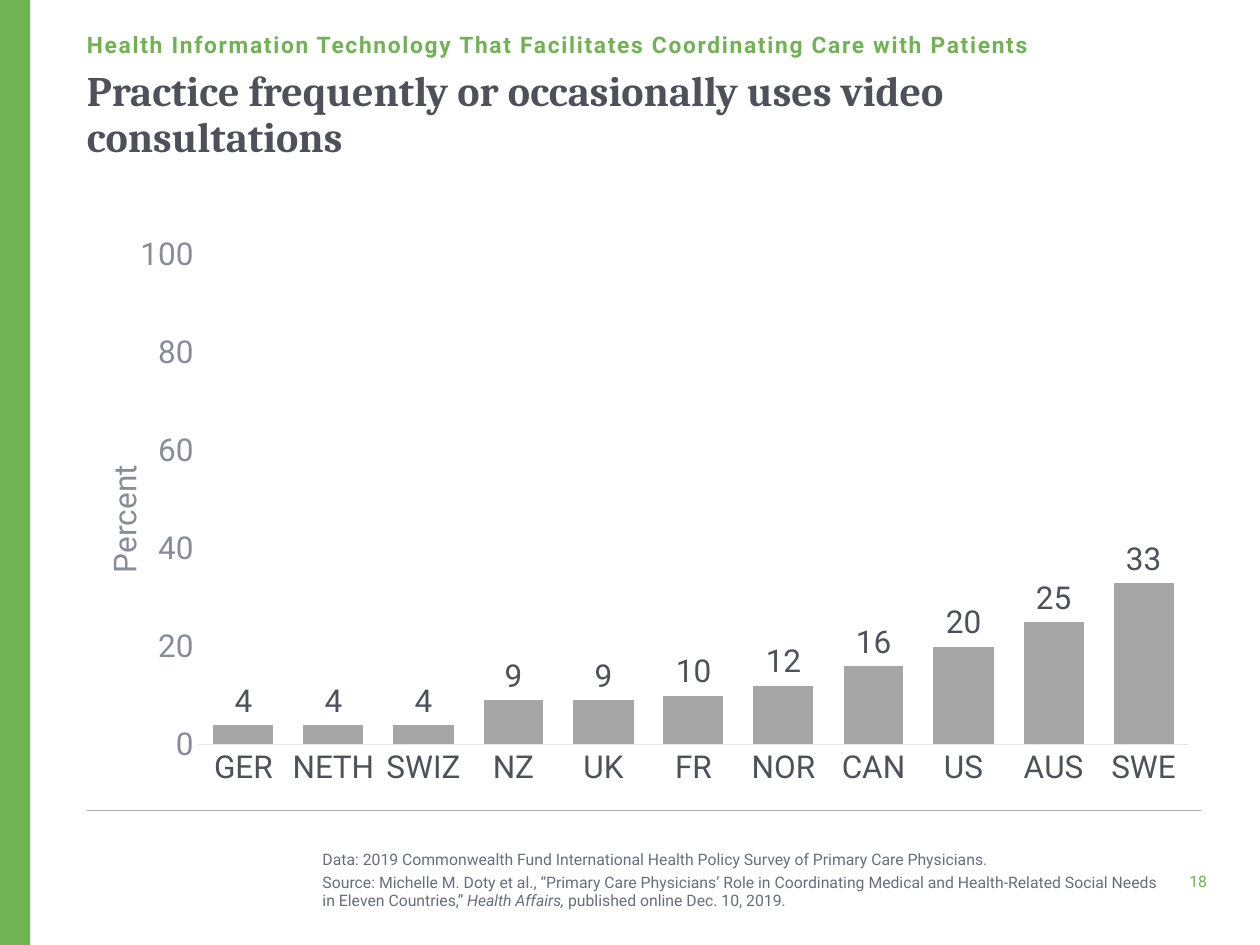
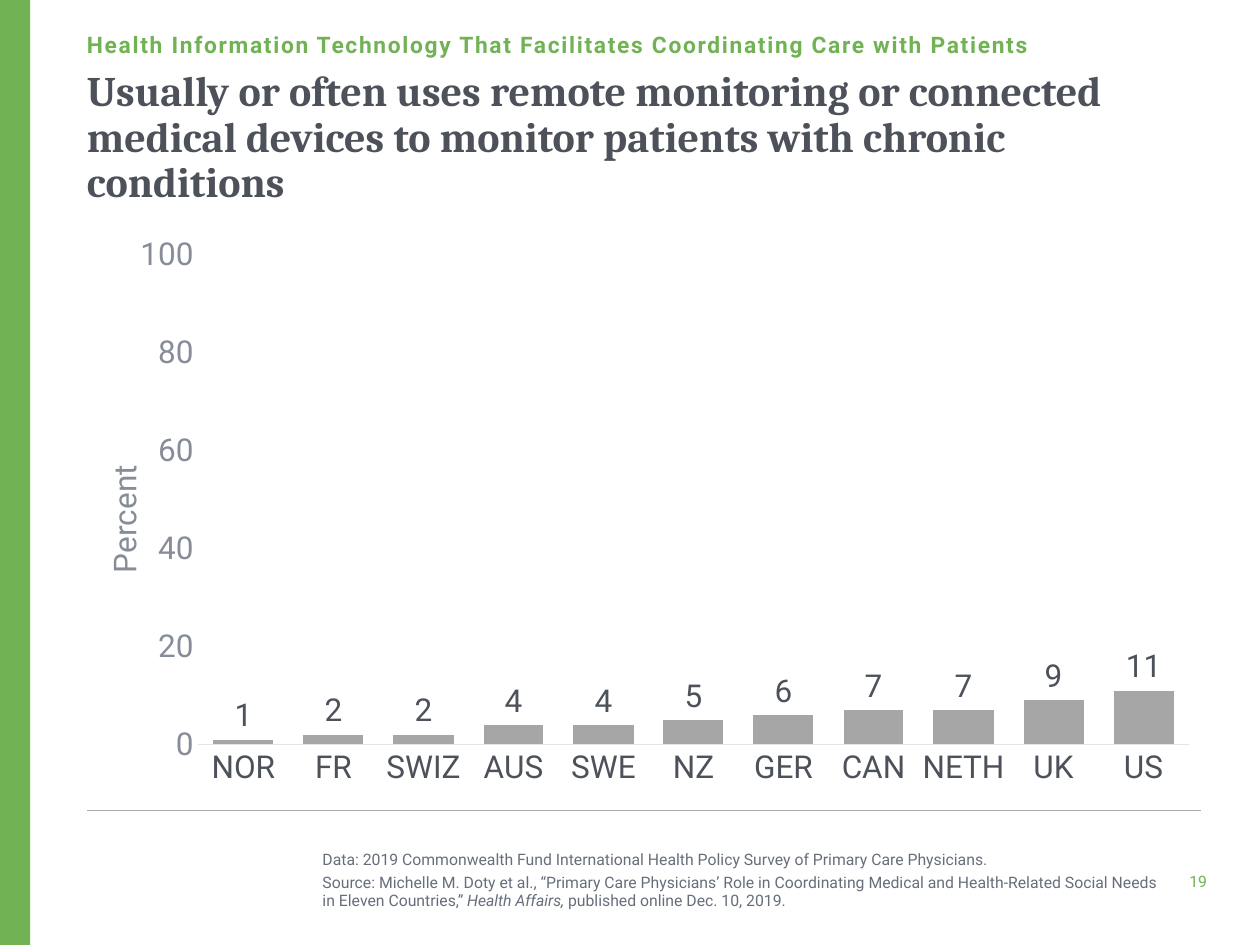
"""Build two chart slides on care coordination technology."""
from dataclasses import dataclass

from lxml import etree
from pptx import Presentation
from pptx.chart.axis import ValueAxis
from pptx.chart.chart import Chart
from pptx.chart.data import CategoryChartData
from pptx.dml.color import RGBColor
from pptx.enum.chart import XL_CHART_TYPE, XL_LABEL_POSITION, XL_TICK_MARK
from pptx.enum.shapes import MSO_CONNECTOR, MSO_SHAPE
from pptx.enum.text import MSO_ANCHOR, PP_ALIGN
from pptx.oxml.ns import qn
from pptx.slide import Slide
from pptx.text.text import Font
from pptx.util import Inches, Pt

COLUMN_CHART = XL_CHART_TYPE.COLUMN_CLUSTERED
LABEL_ABOVE = XL_LABEL_POSITION.OUTSIDE_END
NO_TICK = XL_TICK_MARK.NONE
STRAIGHT = MSO_CONNECTOR.STRAIGHT
RECTANGLE = MSO_SHAPE.RECTANGLE
TOP, MIDDLE, BOTTOM = MSO_ANCHOR.TOP, MSO_ANCHOR.MIDDLE, MSO_ANCHOR.BOTTOM
LEFT, RIGHT = PP_ALIGN.LEFT, PP_ALIGN.RIGHT

WIDTH, HEIGHT = Inches(10), Inches(7.5)
COLUMNS, ROWS = 100, 75

GREEN, DARK, SLATE, MUTED = "71B254", "4C515A", "676E7B", "868D99"
BAR_GREY, RULE_GREY, AXIS_GREY = "A6A6A6", "ABABAB", "E3E5E7"
SANS, SERIF = "Roboto", "Cambria"

SECTION = "Health Information Technology That Facilitates Coordinating Care with Patients"
SOURCES = [
    [("Data: 2019 Commonwealth Fund International Health Policy Survey "
      "of Primary Care Physicians.", False)],
    [("Source: Michelle M. Doty et al., “Primary Care Physicians’ Role in Coordinating "
      "Medical and Health-Related Social Needs in Eleven Countries,” ", False),
     ("Health Affairs,", True),
     (" published online Dec. 10, 2019.", False)],
]


@dataclass(frozen=True)
class Area:
    """A rectangle in grid columns and rows."""
    column: float
    row: float
    columns: float
    rows: float

    def lengths(self) -> tuple[int, int, int, int]:
        """Return left, top, width and height."""
        return (across(self.column), down(self.row),
                across(self.columns), down(self.rows))


@dataclass(frozen=True)
class TextStyle:
    """The look of a block of text."""
    size: float
    color: str
    name: str = SANS
    bold: bool = False
    tracking: int = 0
    anchor: MSO_ANCHOR = TOP
    align: PP_ALIGN = LEFT
    line_spacing: float = 1.0
    gap: float = 0
    wrap: bool = True


@dataclass(frozen=True)
class ChartPage:
    """The content of one slide."""
    number: int
    title: str
    percents: dict[str, int]


BAND = Area(0, 0, 2.4, ROWS)
SECTION_AREA = Area(6.9, 1.9, 88.5, 2.7)
TITLE_AREA = Area(6.9, 5.6, 88.5, 13)
CHART_AREA = Area(6.9, 18.6, 88.5, 44.7)
SOURCE_AREA = Area(25.6, 65.6, 66.3, 8.5)
NUMBER_AREA = Area(92.7, 68.8, 3.1, 2.2)
RULE_START, RULE_END, RULE_ROW = 6.9, 95.3, 64.3

SECTION_STYLE = TextStyle(13, GREEN, bold=True, tracking=100, anchor=BOTTOM)
TITLE_STYLE = TextStyle(24, DARK, SERIF, bold=True, line_spacing=0.9)
SOURCE_STYLE = TextStyle(9, SLATE, anchor=MIDDLE, gap=1.8)
NUMBER_STYLE = TextStyle(9, GREEN, anchor=MIDDLE, align=RIGHT, wrap=False)
LABEL_STYLE = TextStyle(18, DARK)
SCALE_STYLE = TextStyle(18, MUTED)

PAGES = [
    ChartPage(18, "Practice frequently or occasionally uses video consultations",
              {"GER": 4, "NETH": 4, "SWIZ": 4, "NZ": 9, "UK": 9, "FR": 10,
               "NOR": 12, "CAN": 16, "US": 20, "AUS": 25, "SWE": 33}),
    ChartPage(19, "Usually or often uses remote monitoring or connected medical devices "
              "to monitor patients with chronic conditions",
              {"NOR": 1, "FR": 2, "SWIZ": 2, "AUS": 4, "SWE": 4, "NZ": 5,
               "GER": 6, "CAN": 7, "NETH": 7, "UK": 9, "US": 11}),
]


def across(columns: float) -> int:
    """Convert grid columns to a length."""
    return round(WIDTH * columns / COLUMNS)


def down(rows: float) -> int:
    """Convert grid rows to a length."""
    return round(HEIGHT * rows / ROWS)


def rgb(color: str) -> RGBColor:
    """Convert a hex string to a colour."""
    return RGBColor.from_string(color)


def style_font(font: Font, style: TextStyle) -> None:
    """Apply a text style to a font."""
    font.name = style.name
    font.size = Pt(style.size)
    font.bold = style.bold
    font.color.rgb = rgb(style.color)
    if style.tracking:
        font._element.set("spc", str(style.tracking))


def add_text(page: Slide, area: Area, style: TextStyle,
             paragraphs: list[list[tuple[str, bool]]]) -> None:
    """Add a text box of paragraphs made of (text, italic) spans."""
    box = page.shapes.add_textbox(*area.lengths())
    frame = box.text_frame
    frame.word_wrap = style.wrap
    frame.vertical_anchor = style.anchor
    frame.margin_left = frame.margin_right = frame.margin_top = frame.margin_bottom = 0
    for index, spans in enumerate(paragraphs):
        para = frame.add_paragraph() if index else frame.paragraphs[0]
        para.alignment = style.align
        para.line_spacing = style.line_spacing
        if index:
            para.space_before = Pt(style.gap)
        style_font(para.font, style)
        for text, italic in spans:
            span = para.add_run()
            span.text = text
            if italic:
                span.font.italic = True


def add_frame(page: Slide) -> None:
    """Add the side band and the rule above the sources."""
    band = page.shapes.add_shape(RECTANGLE, *BAND.lengths())
    band.shadow.inherit = False
    band.fill.solid()
    band.fill.fore_color.rgb = rgb(GREEN)
    band.line.fill.background()
    rule = page.shapes.add_connector(STRAIGHT, across(RULE_END), down(RULE_ROW),
                                     across(RULE_START), down(RULE_ROW))
    rule.line.color.rgb = rgb(RULE_GREY)
    rule.line.width = Pt(0.75)
    etree.SubElement(rule._element.spPr, qn("a:effectLst"))


def set_layout(parent: etree._Element, **settings: str | float) -> None:
    """Give a chart part a manual layout."""
    layout = parent.find(qn("c:layout"))
    if layout is None:
        layout = etree.Element(qn("c:layout"))
        parent.insert(0, layout)
    manual = etree.SubElement(layout, qn("c:manualLayout"))
    for name, value in settings.items():
        etree.SubElement(manual, qn(f"c:{name}")).set("val", str(value))


def style_scale(axis: ValueAxis) -> None:
    """Set the percent scale and its upright title."""
    axis.minimum_scale, axis.maximum_scale, axis.major_unit = 0, 100, 20
    axis.has_major_gridlines = False
    axis.major_tick_mark = axis.minor_tick_mark = NO_TICK
    axis.format.line.fill.background()
    axis.tick_labels.number_format = "#,##0"
    axis.tick_labels.number_format_is_linked = False
    style_font(axis.tick_labels.font, SCALE_STYLE)
    frame = axis.axis_title.text_frame
    frame.text = "Percent"
    style_font(frame.paragraphs[0].font, SCALE_STYLE)
    frame._txBody.bodyPr.set("rot", "-5400000")
    frame._txBody.bodyPr.set("vert", "horz")
    set_layout(axis.axis_title._element, xMode="edge", yMode="edge", x=0.01, y=0.4)


def style_columns(chart: Chart) -> None:
    """Set the columns, their labels and the country axis."""
    plot = chart.plots[0]
    plot.gap_width, plot.overlap = 50, -27
    plot.vary_by_categories = False
    fill = plot.series[0].format.fill
    fill.solid()
    fill.fore_color.rgb = rgb(BAR_GREY)
    plot.has_data_labels = True
    labels = plot.data_labels
    labels.show_value = True
    labels.position = LABEL_ABOVE
    labels.number_format = "0"
    labels.number_format_is_linked = False
    style_font(labels.font, LABEL_STYLE)
    axis = chart.category_axis
    axis.major_tick_mark = axis.minor_tick_mark = NO_TICK
    axis.format.line.color.rgb = rgb(AXIS_GREY)
    axis.format.line.width = Pt(0.75)
    style_font(axis.tick_labels.font, LABEL_STYLE)


def add_percent_chart(page: Slide, percents: dict[str, int]) -> None:
    """Add the column chart of percents by country."""
    data = CategoryChartData()
    data.categories = list(percents)
    data.add_series("Series 1", list(percents.values()))
    chart = page.shapes.add_chart(COLUMN_CHART, *CHART_AREA.lengths(), data).chart
    chart.has_legend = chart.has_title = False
    style_font(chart.font, LABEL_STYLE)
    style_columns(chart)
    style_scale(chart.value_axis)
    set_layout(chart._chartSpace.chart.plotArea, layoutTarget="inner",
               xMode="edge", yMode="edge", x=0.1, y=0.037, w=0.888, h=0.869)


def main() -> None:
    """Build and save the deck."""
    deck = Presentation()
    deck.slide_width, deck.slide_height = WIDTH, HEIGHT
    for content in PAGES:
        page = deck.slides.add_slide(deck.slide_layouts[6])
        add_frame(page)
        add_text(page, NUMBER_AREA, NUMBER_STYLE, [[(str(content.number), False)]])
        add_percent_chart(page, content.percents)
        add_text(page, SOURCE_AREA, SOURCE_STYLE, SOURCES)
        add_text(page, SECTION_AREA, SECTION_STYLE, [[(SECTION, False)]])
        add_text(page, TITLE_AREA, TITLE_STYLE, [[(content.title, False)]])
    deck.save("out.pptx")


if __name__ == "__main__":
    main()
